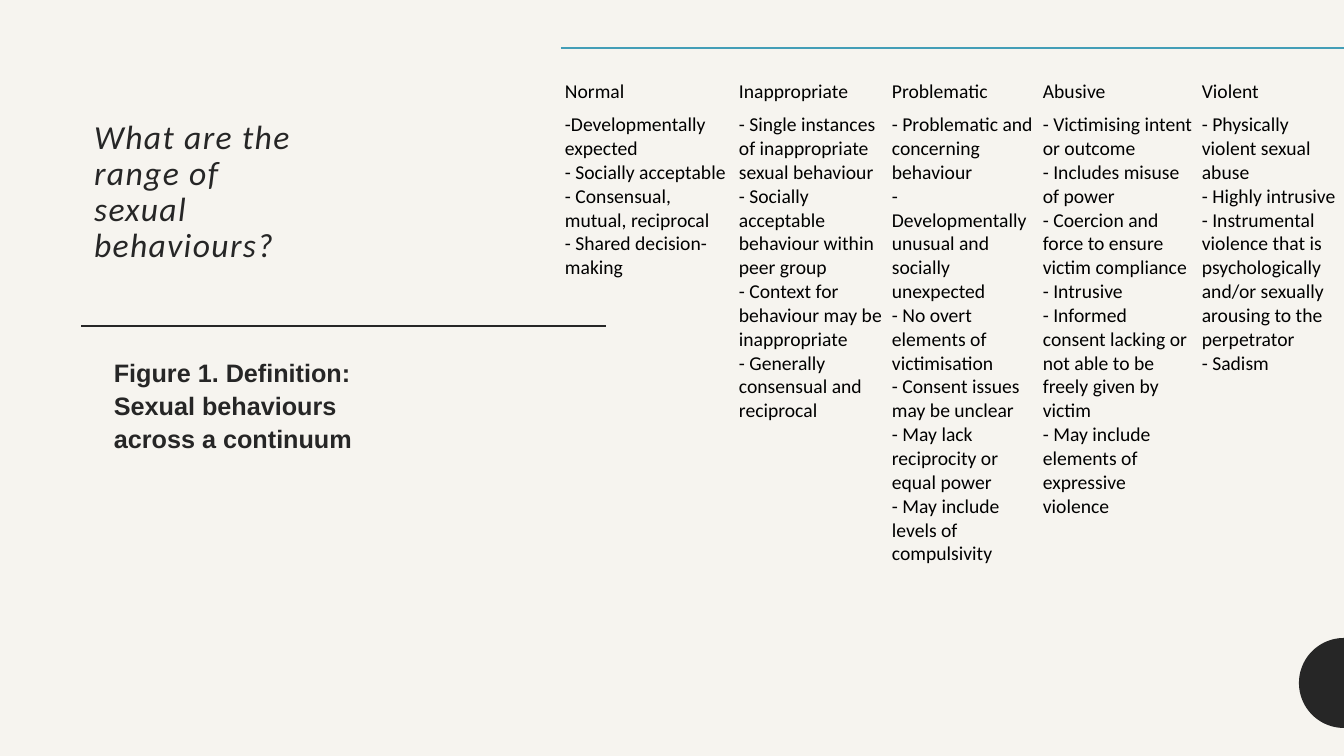
from math import cos, sin, pi
from lxml.etree import SubElement as Sub
from pptx import Presentation
from pptx.dml.color import RGBColor as Rgb
from pptx.enum.shapes import MSO_CONNECTOR as Link
from pptx.enum.text import MSO_ANCHOR as Anchor, MSO_AUTO_SIZE as Auto, PP_ALIGN as Align
from pptx.oxml.ns import qn
from pptx.util import Emu, Pt

TITLE = "What are the range of sexual behaviours?"
NOTE = "Figure 1. Definition: Sexual behaviours across a continuum"
RANGE = [
    ("Normal", 174, [
        "-Developmentally expected",
        "- Socially acceptable",
        "- Consensual, mutual, reciprocal",
        "- Shared decision-making"]),
    ("Inappropriate", 153, [
        "- Single instances of inappropriate sexual behaviour",
        "- Socially acceptable behaviour within peer group",
        "- Context for behaviour may be inappropriate",
        "- Generally consensual and reciprocal"]),
    ("Problematic", 151, [
        "- Problematic and concerning behaviour",
        "- Developmentally unusual and socially unexpected",
        "- No overt elements of victimisation",
        "- Consent issues may be unclear",
        "- May lack reciprocity or equal power",
        "- May include levels of compulsivity"]),
    ("Abusive", 159, [
        "- Victimising intent or outcome",
        "- Includes misuse of power",
        "- Coercion and force to ensure victim compliance",
        "- Intrusive",
        "- Informed consent lacking or not able to be freely given by victim",
        "- May include elements of expressive violence"]),
    ("Violent", 152, [
        "- Physically violent sexual abuse",
        "- Highly intrusive",
        "- Instrumental violence that is psychologically and/or sexually arousing to the perpetrator",
        "- Sadism"]),
]
ROWS = [64, 633]
WIDE, HIGH = 1344, 756
DARK, PAPER, TEAL, BLACK = "262626", "F6F4EF", "439EB7", "000000"
PLAIN = "{2D5ABB26-0587-4C30-8999-92F81FD0307C}"


def px(n):
    """Turn px into EMU."""
    return Emu(round(n * 914400 / 100.8))


def tint(code):
    """Turn a hex string into a colour."""
    return Rgb.from_string(code)


def place(shape, *box):
    """Set left, top, width and height in px."""
    shape.left, shape.top, shape.width, shape.height = map(px, box)


def write(frame, text, size=14, font="Calibri", color=BLACK, bold=False, italic=False,
          line=None, gap=0, indent=0, track=0, anchor=Anchor.TOP):
    """Fill a text frame with one formatted paragraph."""
    frame.word_wrap = True
    frame.vertical_anchor = anchor
    para = frame.paragraphs[0]
    para.text = text
    para.alignment = Align.LEFT
    para.line_spacing = line
    para.space_before = para.space_after = Pt(gap)
    if indent:
        props = para._p.get_or_add_pPr()
        props.set("marL", str(px(indent)))
        props.set("indent", "0")
    for run in para.runs:
        face = run.font
        face.name, face.size, face.bold, face.italic = font, Pt(size), bold, italic
        face.color.rgb = tint(color)
        if track:
            run._r.get_or_add_rPr().set("spc", str(track * 100))


def rule(shapes, left, right, y):
    """Draw the level line below the title."""
    line = shapes.add_connector(Link.STRAIGHT, px(right), px(y), px(left), px(y))
    line.line.color.rgb = tint(DARK)
    line.line.width = Pt(1.5)
    Sub(line._element.spPr, qn("a:effectLst"))


def disc(shapes, x, y, size, steps=48):
    """Draw the half disc at the right edge."""
    turns = [pi / 2 + pi * i / steps for i in range(steps + 1)]
    dots = [(px(x + size * cos(t)), px(y + size * sin(t))) for t in turns]
    path = shapes.build_freeform(*dots[0])
    path.add_line_segments(dots[1:], close=True)
    half = path.convert_to_shape()
    half.shadow.inherit = False
    half.fill.solid()
    half.fill.fore_color.rgb = tint(DARK)
    half.line.fill.background()


def edge(cell):
    """Give a cell its teal top border."""
    line = Sub(cell._tc.get_or_add_tcPr(), qn("a:lnT"), w=str(Pt(1)))
    fill = Sub(line, qn("a:solidFill"))
    Sub(fill, qn("a:srgbClr"), val=TEAL)


def grid(shapes, left, top):
    """Build the table of behaviours."""
    wide = sum(w for _, w, _ in RANGE)
    frame = shapes.add_table(2, len(RANGE), px(left), px(top), px(wide), px(sum(ROWS)))
    table = frame.table
    table.first_row = table.horz_banding = False
    table._tbl.tblPr.find(qn("a:tableStyleId")).text = PLAIN
    for row, high in zip(table.rows, ROWS):
        row.height = px(high)
    for col, (name, width, items) in enumerate(RANGE):
        table.columns[col].width = px(width)
        for row, text in enumerate((name, "\v".join(items))):
            cell = table.cell(row, col)
            cell.margin_left = cell.margin_right = px(4)
            cell.margin_top, cell.margin_bottom = px(1), px(8)
            write(cell.text_frame, text)
            cell.vertical_anchor = Anchor.TOP if row else Anchor.BOTTOM
            if row == 0:
                edge(cell)
            cell.fill.background()


def main():
    """Build and save the slide."""
    deck = Presentation()
    deck.slide_width, deck.slide_height = px(WIDE), px(HIGH)
    slide = deck.slides.add_slide(deck.slide_layouts[5])
    back = slide.background.fill
    back.solid()
    back.fore_color.rgb = tint(PAPER)
    shapes = slide.shapes
    title = shapes.title
    place(title, 84, 84, 236, 217)
    title.text_frame.auto_size = Auto.NONE
    write(title.text_frame, TITLE, size=24, color=DARK, italic=True, line=0.9,
          track=1, anchor=Anchor.MIDDLE)
    rule(shapes, 81, 606, 326)
    note = shapes.add_textbox(px(84), px(349), px(349), px(289))
    write(note.text_frame, NOTE, size=18, font="Arial", color=DARK, bold=True,
          line=1.1, gap=4, indent=20)
    disc(shapes, WIDE, 683, 45)
    grid(shapes, 561, 48)
    deck.save("out.pptx")


if __name__ == "__main__":
    main()
